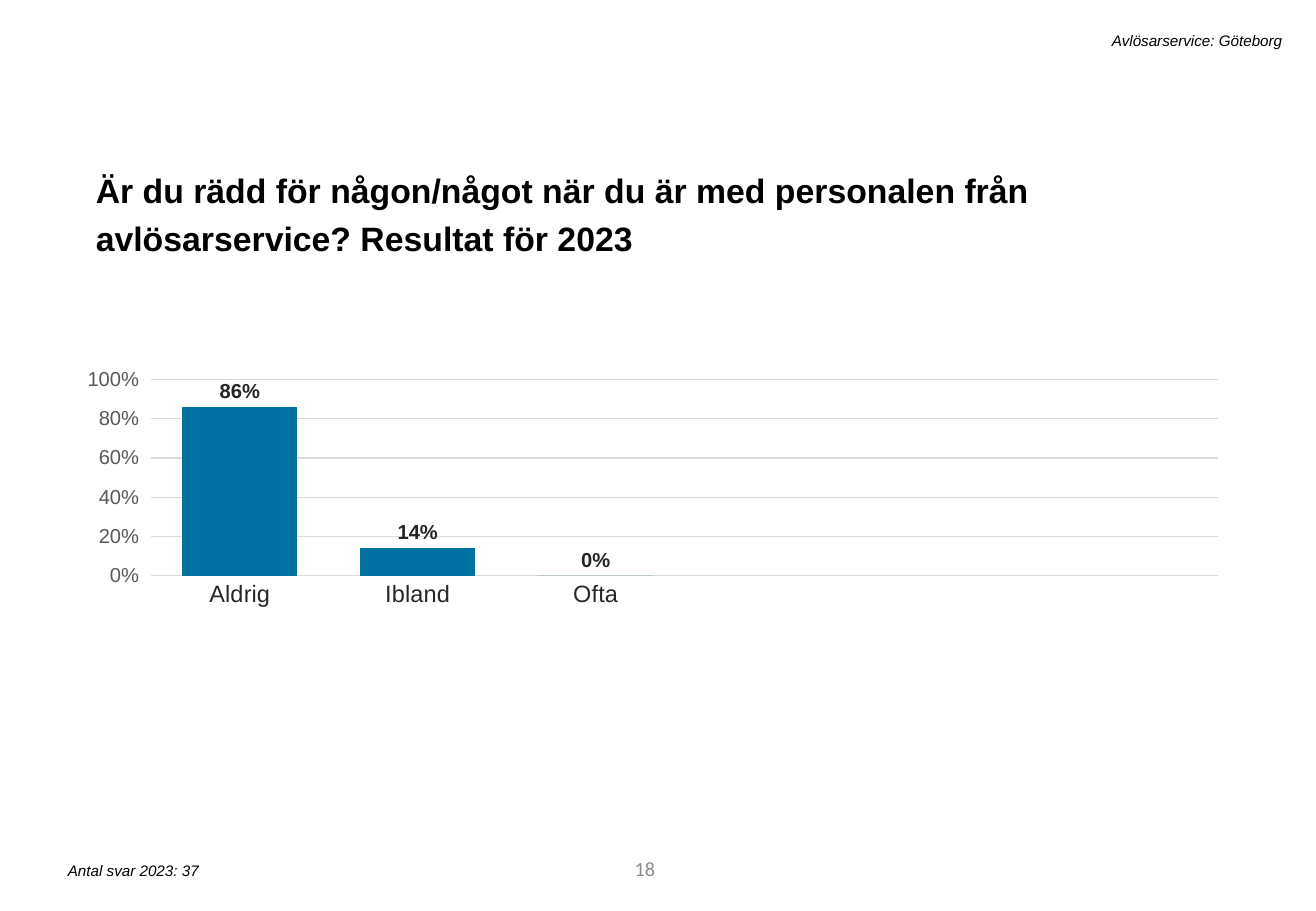
from dataclasses import dataclass

from lxml import etree
from pptx import Presentation
from pptx import util as u
from pptx.chart import data
from pptx.dml import color
from pptx.enum import chart as charts
from pptx.enum import text
from pptx.oxml import ns


@dataclass(frozen=True)
class Theme:
    """Colours, fonts and type sizes of the slide."""
    font: str = "Arial"
    number_font: str = "Calibri"
    black: str = "000000"
    label: str = "262626"
    scale: str = "595959"
    number: str = "8C8C8C"
    grid: str = "D9D9D9"
    bar: str = "0071A1"
    title_size: float = 20
    category_size: float = 14
    scale_size: float = 12
    chart_size: float = 10
    note_size: float = 9


THEME = Theme()


@dataclass(frozen=True)
class Caption:
    """A text box with one paragraph in one style."""
    words: str
    left: float
    top: float
    width: float
    height: float
    size: float
    ink: str = THEME.black
    font: str = THEME.font
    bold: bool = False
    italic: bool = False
    right: bool = False
    middle: bool = False
    line_spacing: float = 1.0
    space_before: float = 0


CAPTIONS = [
    Caption("18", 3.05, 6.95, 2.44, 0.4, THEME.scale_size, THEME.number,
            THEME.number_font, right=True, middle=True),
    Caption("Är du rädd för någon/något när du är med personalen från "
            "avlösarservice? Resultat för 2023", 0.69, 1.28, 9.4, 0.47,
            THEME.title_size, bold=True, line_spacing=1.2, space_before=10),
    Caption("Avlösarservice: Göteborg", 1.79, 0.21, 8.86, 0.25,
            THEME.note_size, italic=True, right=True),
    Caption("Antal svar 2023: 37", 0.46, 7.04, 4.41, 0.25,
            THEME.note_size, italic=True),
]
ANSWERS = {"Aldrig": 0.86, "Ibland": 0.14, "Ofta": 0}
EMPTY_SLOTS = 3
PLOT_AREA = {"x": 0.05, "y": 0.15, "w": 0.94, "h": 0.41}


def style_font(font, size: float, ink: str, name: str = THEME.font,
               bold: bool = False, italic: bool = False) -> None:
    """Set the face, size, colour and weight of a font."""
    font.name, font.size = name, u.Pt(size)
    font.bold, font.italic = bold, italic
    font.color.rgb = color.RGBColor.from_string(ink)


def style_line(line) -> None:
    """Give an axis or grid line its thin grey stroke."""
    line.width = u.Pt(0.75)
    line.color.rgb = color.RGBColor.from_string(THEME.grid)


def add_caption(slide, caption: Caption) -> None:
    """Draw one caption as a text box."""
    shape = slide.shapes.add_textbox(u.Inches(caption.left), u.Inches(caption.top),
                                     u.Inches(caption.width), u.Inches(caption.height))
    frame = shape.text_frame
    frame.text = caption.words
    frame.word_wrap = True
    if caption.middle:
        frame.vertical_anchor = text.MSO_ANCHOR.MIDDLE
    else:
        frame.auto_size = text.MSO_AUTO_SIZE.SHAPE_TO_FIT_TEXT
    paragraph = frame.paragraphs[0]
    paragraph.alignment = text.PP_ALIGN.RIGHT if caption.right else text.PP_ALIGN.LEFT
    paragraph.line_spacing = caption.line_spacing
    paragraph.space_before = u.Pt(caption.space_before)
    style_font(paragraph.runs[0].font, caption.size, caption.ink, caption.font,
               caption.bold, caption.italic)


def place_plot(chart) -> None:
    """Fix the inner plot area as fractions of the chart."""
    plot_area = chart.plots[0]._element.getparent()
    for old in plot_area.findall(ns.qn("c:layout")):
        plot_area.remove(old)
    layout = etree.Element(ns.qn("c:layout"))
    manual = etree.SubElement(layout, ns.qn("c:manualLayout"))
    settings = {"layoutTarget": "inner", "xMode": "edge", "yMode": "edge", **PLOT_AREA}
    for tag, value in settings.items():
        etree.SubElement(manual, ns.qn(f"c:{tag}")).set("val", str(value))
    plot_area.insert(0, layout)


def style_axes(chart) -> None:
    """Format the answer axis and the percentage axis."""
    categories, values = chart.category_axis, chart.value_axis
    categories.major_tick_mark = charts.XL_TICK_MARK.NONE
    style_font(categories.tick_labels.font, THEME.category_size, THEME.label)
    style_line(categories.format.line)
    values.minimum_scale, values.maximum_scale, values.major_unit = 0, 1, 0.2
    values.major_tick_mark = charts.XL_TICK_MARK.OUTSIDE
    values.tick_labels.number_format = "0%"
    values.tick_labels.number_format_is_linked = False
    style_font(values.tick_labels.font, THEME.scale_size, THEME.scale)
    values.format.line.fill.background()
    style_line(values.major_gridlines.format.line)


def add_answer_chart(slide) -> None:
    """Draw the column chart of answer shares."""
    chart_data = data.CategoryChartData(number_format="0%")
    chart_data.categories = [*ANSWERS, *[""] * EMPTY_SLOTS]
    chart_data.add_series("Series 1", [*ANSWERS.values(), *[None] * EMPTY_SLOTS])
    chart = slide.shapes.add_chart(
        charts.XL_CHART_TYPE.COLUMN_CLUSTERED, u.Inches(0.72), u.Inches(2.53),
        u.Inches(9.4), u.Inches(3.95), chart_data).chart
    chart.has_legend = chart.has_title = False
    style_font(chart.font, THEME.chart_size, THEME.black)
    plot = chart.plots[0]
    plot.gap_width = 55
    plot.vary_by_categories = False
    fill = plot.series[0].format.fill
    fill.solid()
    fill.fore_color.rgb = color.RGBColor.from_string(THEME.bar)
    labels = plot.series[0].data_labels
    labels.show_value = True
    labels.position = charts.XL_LABEL_POSITION.OUTSIDE_END
    labels.number_format, labels.number_format_is_linked = "0%", False
    style_font(labels.font, THEME.scale_size, THEME.label, bold=True)
    style_axes(chart)
    place_plot(chart)


def main() -> None:
    """Build and save the slide."""
    presentation = Presentation()
    presentation.slide_width = u.Inches(10.83)
    presentation.slide_height = u.Inches(7.5)
    slide = presentation.slides.add_slide(presentation.slide_layouts[6])
    for caption in CAPTIONS:
        add_caption(slide, caption)
    add_answer_chart(slide)
    presentation.save("out.pptx")


if __name__ == "__main__":
    main()
